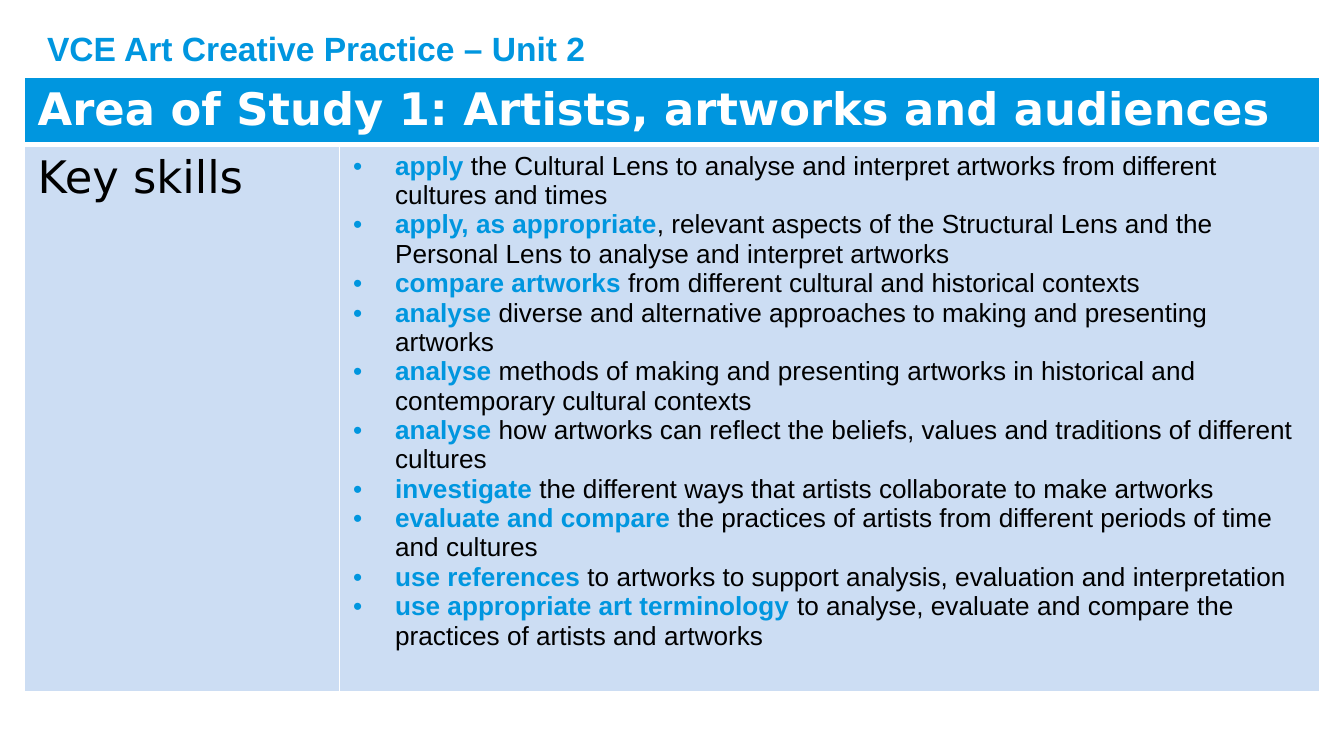
import pptx
import pptx.util
import pptx.dml.color
import pptx.enum.text
import pptx.oxml
import pptx.oxml.ns

Pt = pptx.util.Pt
Enum = pptx.enum.text

TITLE = "VCE Art Creative Practice – Unit 2"
HEAD = "Area of Study 1: Artists, artworks and audiences"
LABEL = "Key skills"
SKILLS = [
    ("apply", " the Cultural Lens to analyse and interpret artworks from different cultures and times"),
    ("apply, as appropriate", ", relevant aspects of the Structural Lens and the Personal Lens to analyse and interpret artworks"),
    ("compare artworks ", "from different cultural and historical contexts"),
    ("analyse", " diverse and alternative approaches to making and presenting artworks"),
    ("analyse", " methods of making and presenting artworks in historical and contemporary cultural contexts"),
    ("analyse", " how artworks can reflect the beliefs, values and traditions of different cultures"),
    ("investigate", " the different ways that artists collaborate to make artworks"),
    ("evaluate and compare ", "the practices of artists from different periods of time and cultures"),
    ("use references ", "to artworks to support analysis, evaluation and interpretation"),
    ("use appropriate art terminology ", "to analyse, evaluate and compare the practices of artists and artworks"),
]

THEME = {
    "blue": "0096DF", "pale": "CCDDF3", "white": "FFFFFF", "black": "000000",
    "title": 18, "head": 24, "body": 14,
    "sans": "Arial", "wide": "DejaVu Sans",
}
COLS = (169, 525)
ROWS = (35, 275)
INDENT = 22.5


def tint(name):
    return pptx.dml.color.RGBColor.from_string(THEME[name])


def write(para, text, size="body", face="sans", color="black", bold=False):
    run = para.add_run()
    run.text = text
    font = run.font
    font.size, font.name, font.bold = Pt(THEME[size]), THEME[face], bold
    font.color.rgb = tint(color)


def dot(para):
    """Give the paragraph a bullet with a hanging indent."""
    props = para._p.get_or_add_pPr()
    props.set("marL", str(Pt(INDENT)))
    props.set("indent", str(-Pt(INDENT)))
    ns = pptx.oxml.ns.nsdecls("a")
    props.append(pptx.oxml.parse_xml(f'<a:buFont {ns} typeface="Arial"/>'))
    props.append(pptx.oxml.parse_xml(f'<a:buChar {ns} char="•"/>'))


def style(cell, fill, **widths):
    """Draw white borders, 1 pt unless a side is given, then fill the cell."""
    props = cell._tc.get_or_add_tcPr()
    ns = pptx.oxml.ns.nsdecls("a")
    for side in "LRTB":
        wide = Pt(widths.get(side, 1))
        props.append(pptx.oxml.parse_xml(
            f'<a:ln{side} {ns} w="{wide}"><a:solidFill>'
            f'<a:srgbClr val="{THEME["white"]}"/></a:solidFill></a:ln{side}>'))
    cell.fill.solid()
    cell.fill.fore_color.rgb = tint(fill)


def add_title(slide):
    title = slide.shapes.title
    title.left, title.top, title.width, title.height = Pt(18), Pt(11.5), Pt(360), Pt(29)
    frame = title.text_frame
    frame.word_wrap = True
    frame.auto_size = Enum.MSO_AUTO_SIZE.SHAPE_TO_FIT_TEXT
    frame.vertical_anchor = Enum.MSO_ANCHOR.TOP
    para = frame.paragraphs[0]
    para.alignment = Enum.PP_ALIGN.LEFT
    write(para, TITLE, size="title", color="blue", bold=True)


def add_grid(slide):
    grid = slide.shapes.add_table(
        len(ROWS), len(COLS), Pt(13), Pt(41.5), Pt(sum(COLS)), Pt(sum(ROWS))).table
    for col, width in zip(grid.columns, COLS):
        col.width = Pt(width)
    for row, height in zip(grid.rows, ROWS):
        row.height = Pt(height)
    for col in range(len(COLS)):
        style(grid.cell(0, col), "blue", B=3)
        style(grid.cell(1, col), "pale", T=3)

    head, label, skills = grid.cell(0, 0), grid.cell(1, 0), grid.cell(1, 1)
    head.merge(grid.cell(0, 1))
    write(head.text_frame.paragraphs[0], HEAD, size="head", face="wide",
          color="white", bold=True)
    write(label.text_frame.paragraphs[0], LABEL, size="head", face="wide")
    frame = skills.text_frame
    for i, (verb, rest) in enumerate(SKILLS):
        para = frame.add_paragraph() if i else frame.paragraphs[0]
        dot(para)
        write(para, verb, color="blue", bold=True)
        write(para, rest)


def main():
    deck = pptx.Presentation()
    deck.slide_width, deck.slide_height = Pt(720), Pt(405)
    slide = deck.slides.add_slide(deck.slide_layouts[5])
    add_grid(slide)
    add_title(slide)
    deck.save("out.pptx")


if __name__ == "__main__":
    main()
